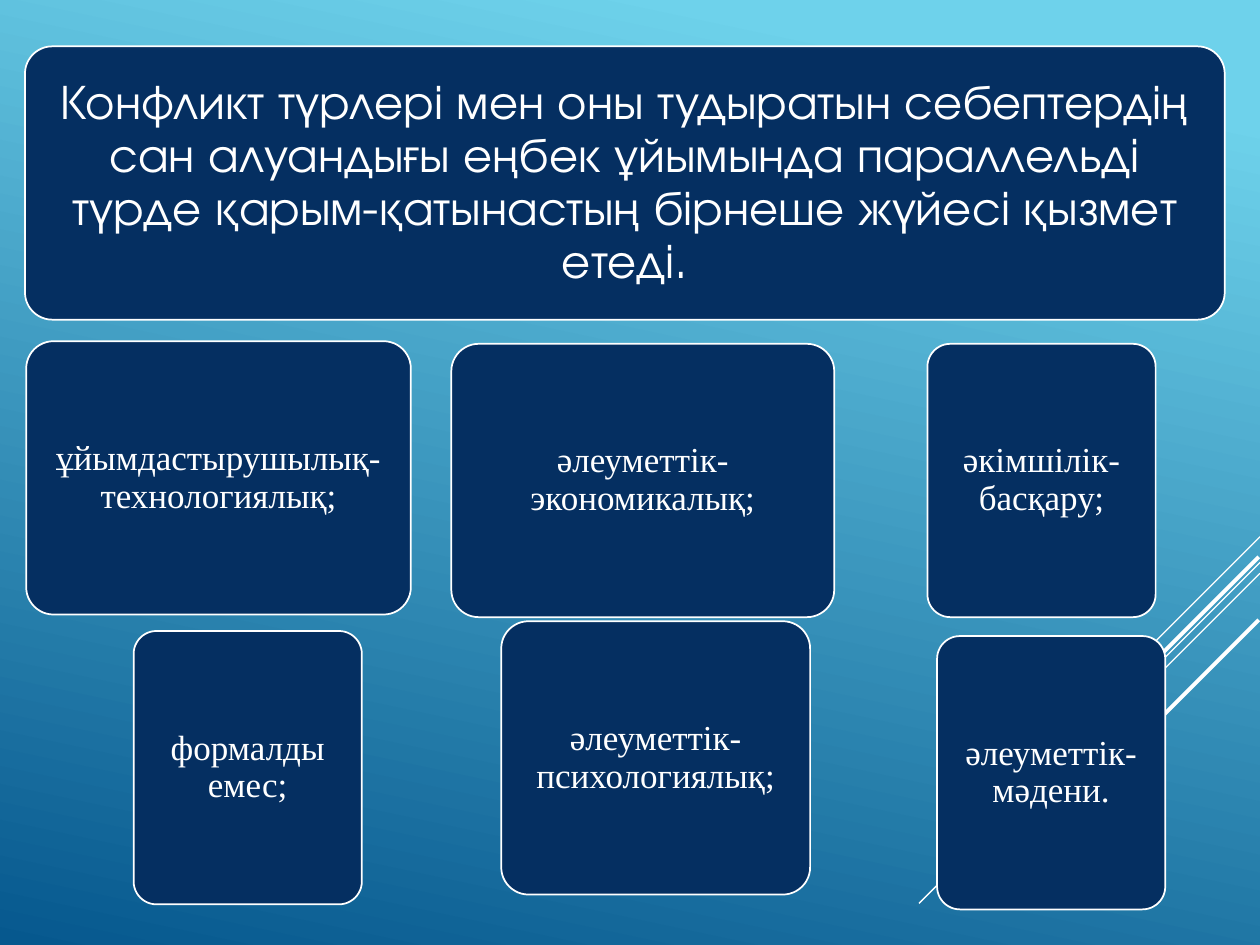
from dataclasses import dataclass

import pptx
import pptx.dml.color
import pptx.enum.shapes
import pptx.enum.text
import pptx.oxml
import pptx.util
from pptx.oxml import ns

Pt = pptx.util.Pt


@dataclass(frozen=True)
class Theme:
    light: str = "6ED2EB"
    dark: str = "06588E"
    navy: str = "052F61"
    white: str = "FFFFFF"
    heading_font: str = "TeX Gyre Adventor"
    label_font: str = "Times New Roman"
    heading_size: int = 28
    label_size: int = 20


THEME = Theme()
BOX_HEIGHT = 156.2

HEADING = (
    "Конфликт түрлері мен оны тудыратын себептердің сан алуандығы еңбек ұйымында "
    "параллельді түрде қарым-қатынастың бірнеше жүйесі қызмет етеді."
)

# text, left, top, width
LABELS = [
    ("ұйымдастырушылық-технологиялық;", 15, 195, 219.8),
    ("әлеуметтік-экономикалық;", 257.9, 196.5, 218.8),
    ("формалды емес;", 76.4, 360.6, 130.4),
    ("әлеуметтік-психологиялық;", 286.4, 355, 176.5),
    ("әкімшілік-басқару;", 530, 196.5, 130.4),
    ("әлеуметтік-мәдени.", 535.5, 363.5, 130.4),
]

# start x, start y, end x, end y, line width
RAYS = [
    (720, 306.7, 660.2, 366.5, 0.75),
    (720, 321.4, 525.2, 516.2, 0.75),
    (720, 327.6, 596.2, 451.4, 0.75),
    (719.3, 318.2, 606.2, 431.3, 2.25),
    (719.3, 354.2, 637.2, 436.3, 2.25),
]


def color(code):
    return pptx.dml.color.RGBColor.from_string(code)


def apply_format(target, values):
    for name, value in values.items():
        setattr(target, name, value)


def paint_background(slide):
    fill = slide.background.fill
    fill.gradient()
    fill.gradient_angle = 360 - 102  # counter-clockwise
    stops = [(0.1, THEME.light), (1, THEME.dark)]
    for stop, (position, code) in zip(fill.gradient_stops, stops):
        stop.position = position
        stop.color.rgb = color(code)


def add_ray(slide, start_x, start_y, end_x, end_y, width):
    ray = slide.shapes.add_connector(
        pptx.enum.shapes.MSO_CONNECTOR.STRAIGHT,
        Pt(start_x), Pt(start_y), Pt(end_x), Pt(end_y),
    )
    ray.line.color.rgb = color(THEME.white)
    ray.line.width = Pt(width)
    properties = ray._element.spPr
    properties.append(pptx.oxml.parse_xml(f"<a:effectLst {ns.nsdecls('a')}/>"))


def add_box(slide, text, left, top, width, font, size):
    box = slide.shapes.add_shape(
        pptx.enum.shapes.MSO_SHAPE.ROUNDED_RECTANGLE,
        Pt(left), Pt(top), Pt(width), Pt(BOX_HEIGHT),
    )
    box.adjustments[0] = 0.1
    box.shadow.inherit = False
    box.fill.solid()
    box.fill.fore_color.rgb = color(THEME.navy)
    box.line.color.rgb = color(THEME.white)
    box.line.width = Pt(1)

    margin = Pt(0.3 * size)
    frame = box.text_frame
    apply_format(frame, {
        "word_wrap": True,
        "vertical_anchor": pptx.enum.text.MSO_ANCHOR.MIDDLE,
        "margin_left": margin,
        "margin_right": margin,
        "margin_top": margin,
        "margin_bottom": margin,
    })
    para = frame.paragraphs[0]
    apply_format(para, {
        "alignment": pptx.enum.text.PP_ALIGN.CENTER,
        "line_spacing": 0.9,
    })
    span = para.add_run()
    span.text = text
    apply_format(span.font, {"name": font, "size": Pt(size)})
    span.font.color.rgb = color(THEME.white)


def main():
    deck = pptx.Presentation()
    apply_format(deck, {"slide_width": Pt(720), "slide_height": Pt(540)})
    page = deck.slides.add_slide(deck.slide_layouts.get_by_name("Blank"))
    paint_background(page)
    for ray in RAYS:
        add_ray(page, *ray)
    add_box(page, HEADING, 14.3, 26.5, 685.6, THEME.heading_font, THEME.heading_size)
    for label in LABELS:
        add_box(page, *label, THEME.label_font, THEME.label_size)
    deck.save("out.pptx")


if __name__ == "__main__":
    main()
